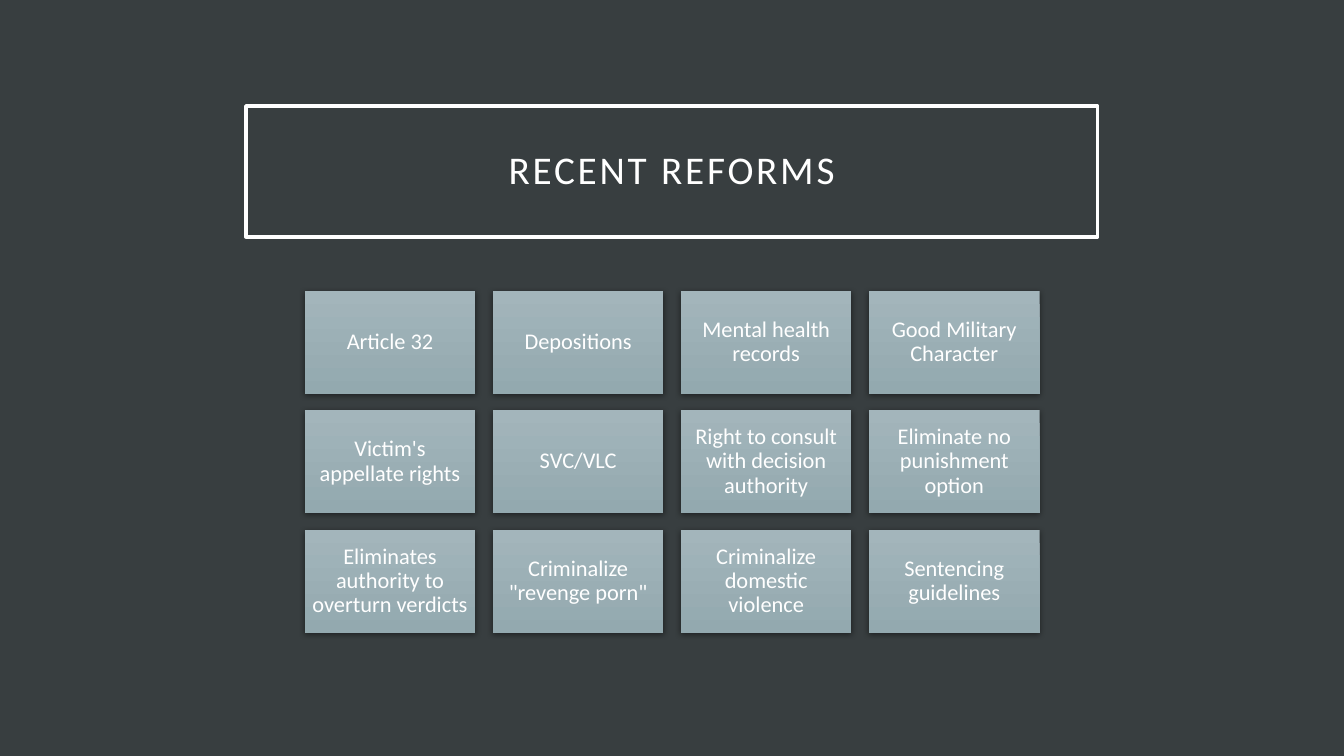
from lxml import etree
from pptx import Presentation
from pptx.dml.color import RGBColor
from pptx.enum.shapes import MSO_SHAPE
from pptx.enum.text import MSO_ANCHOR, PP_ALIGN
from pptx.oxml.ns import qn
from pptx.util import Cm, Pt

RECT = MSO_SHAPE.RECTANGLE
MIDDLE = MSO_ANCHOR.MIDDLE
CENTER = PP_ALIGN.CENTER

REFORMS = [
    ["Article 32", "Depositions", "Mental health records", "Good Military Character"],
    ["Victim's appellate rights", "SVC/VLC", "Right to consult with decision authority",
     "Eliminate no punishment option"],
    ["Eliminates authority to overturn verdicts", 'Criminalize "revenge porn"',
     "Criminalize domestic violence", "Sentencing guidelines"],
]
CARD_LEFT, CARD_TOP = 7.68, 7.33
CARD_W, CARD_H = 4.3, 2.59
PITCH_X, PITCH_Y = 4.74, 3.01


def rgb(value):
    return RGBColor.from_string(value)


def apply(obj, values):
    for name, value in values.items():
        setattr(obj, name, value)


class Deck:
    font = "Calibri"
    white = "FFFFFF"
    back = "383E40"
    gradient = ("A3B5BB", "93A9AF")

    def __init__(self, prs):
        self.s = prs.slides.add_slide(prs.slide_layouts[6])
        fill = self.s.background.fill
        fill.solid()
        fill.fore_color.rgb = rgb(self.back)

    def box(self, text, left, top, width, height, size, inset):
        sp = self.s.shapes.add_shape(RECT, Cm(left), Cm(top), Cm(width), Cm(height))
        sp.shadow.inherit = False
        tf = sp.text_frame
        sides = ("margin_left", "margin_top", "margin_right", "margin_bottom")
        apply(tf, {"word_wrap": True, "vertical_anchor": MIDDLE,
                   **dict.fromkeys(sides, Cm(inset))})
        p = tf.paragraphs[0]
        apply(p, {"alignment": CENTER, "line_spacing": 0.9})
        r = p.add_run()
        r.text = text
        apply(r.font, {"name": self.font, "size": Pt(size)})
        r.font.color.rgb = rgb(self.white)
        return sp, r

    def title(self, text, left, top, width, height):
        sp, r = self.box(text, left, top, width, height, 28, 0.51)
        sp.fill.solid()
        sp.fill.fore_color.rgb = rgb(self.back)
        color = sp._element.spPr.find(qn("a:solidFill"))[0]
        etree.SubElement(color, qn("a:alpha"), val="45000")
        sp.line.color.rgb = rgb(self.white)
        sp.line.width = Pt(2.5)
        r.font._element.set("spc", "200")

    def card(self, text, left, top):
        sp, r = self.box(text, left, top, CARD_W, CARD_H, 16, 0.17)
        sp.fill.gradient()
        sp.fill.gradient_angle = 270
        for stop, color in zip(sp.fill.gradient_stops, self.gradient):
            stop.color.rgb = rgb(color)
        sp.line.fill.background()
        self.shadow(sp)

    def shadow(self, sp):
        effects = sp._element.spPr.find(qn("a:effectLst"))
        outer = etree.SubElement(effects, qn("a:outerShdw"), blurRad=str(Pt(4.4)),
                                 dist=str(Pt(1.2)), dir="5400000", rotWithShape="0")
        color = etree.SubElement(outer, qn("a:srgbClr"), val="000000")
        etree.SubElement(color, qn("a:alpha"), val="45000")


def main():
    prs = Presentation()
    apply(prs, {"slide_width": Cm(33.87), "slide_height": Cm(19.05)})
    deck = Deck(prs)
    deck.title("RECENT REFORMS", 6.2, 2.67, 21.46, 3.3)
    for row, labels in enumerate(REFORMS):
        for col, label in enumerate(labels):
            deck.card(label, CARD_LEFT + col * PITCH_X, CARD_TOP + row * PITCH_Y)
    prs.save("out.pptx")


if __name__ == "__main__":
    main()
